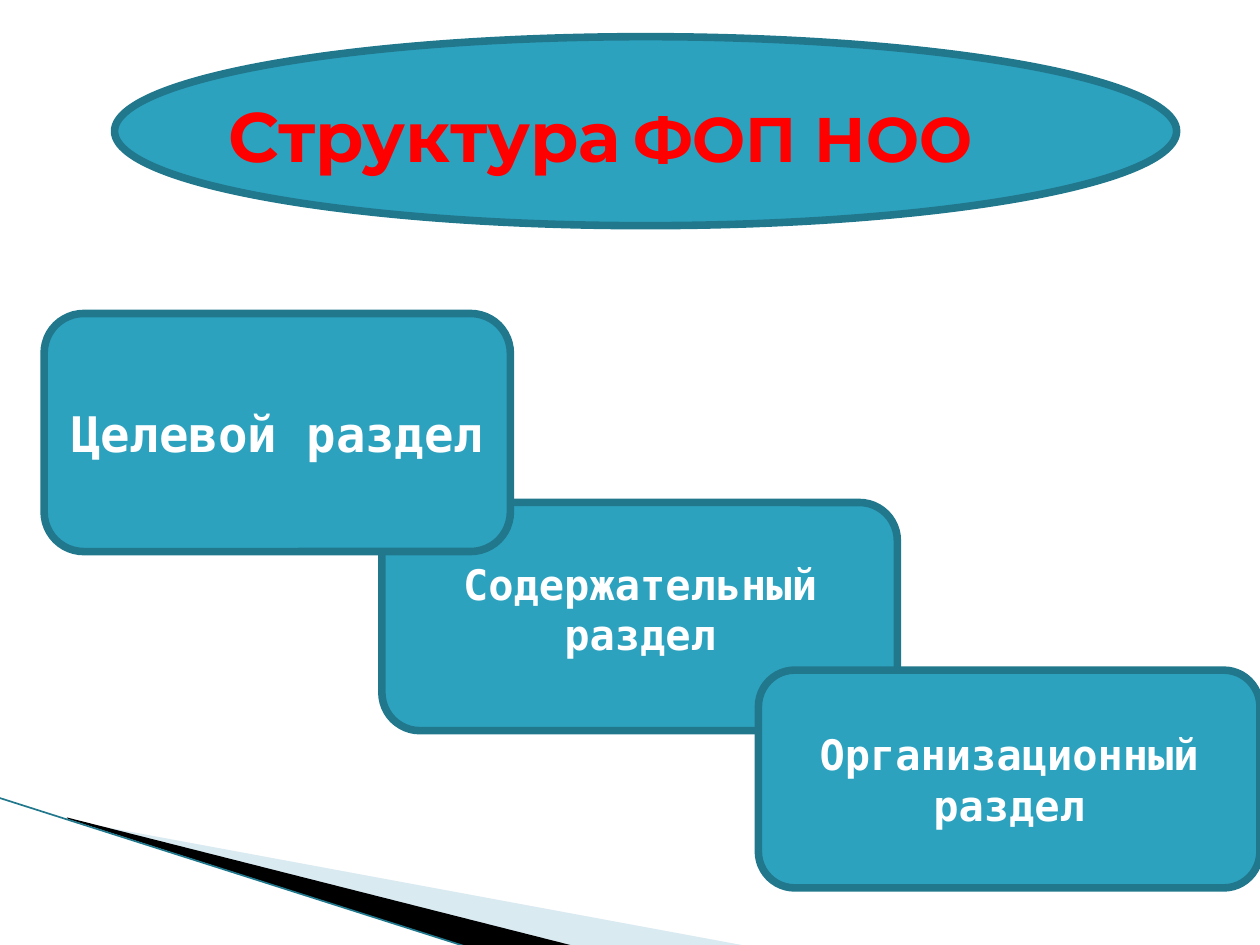
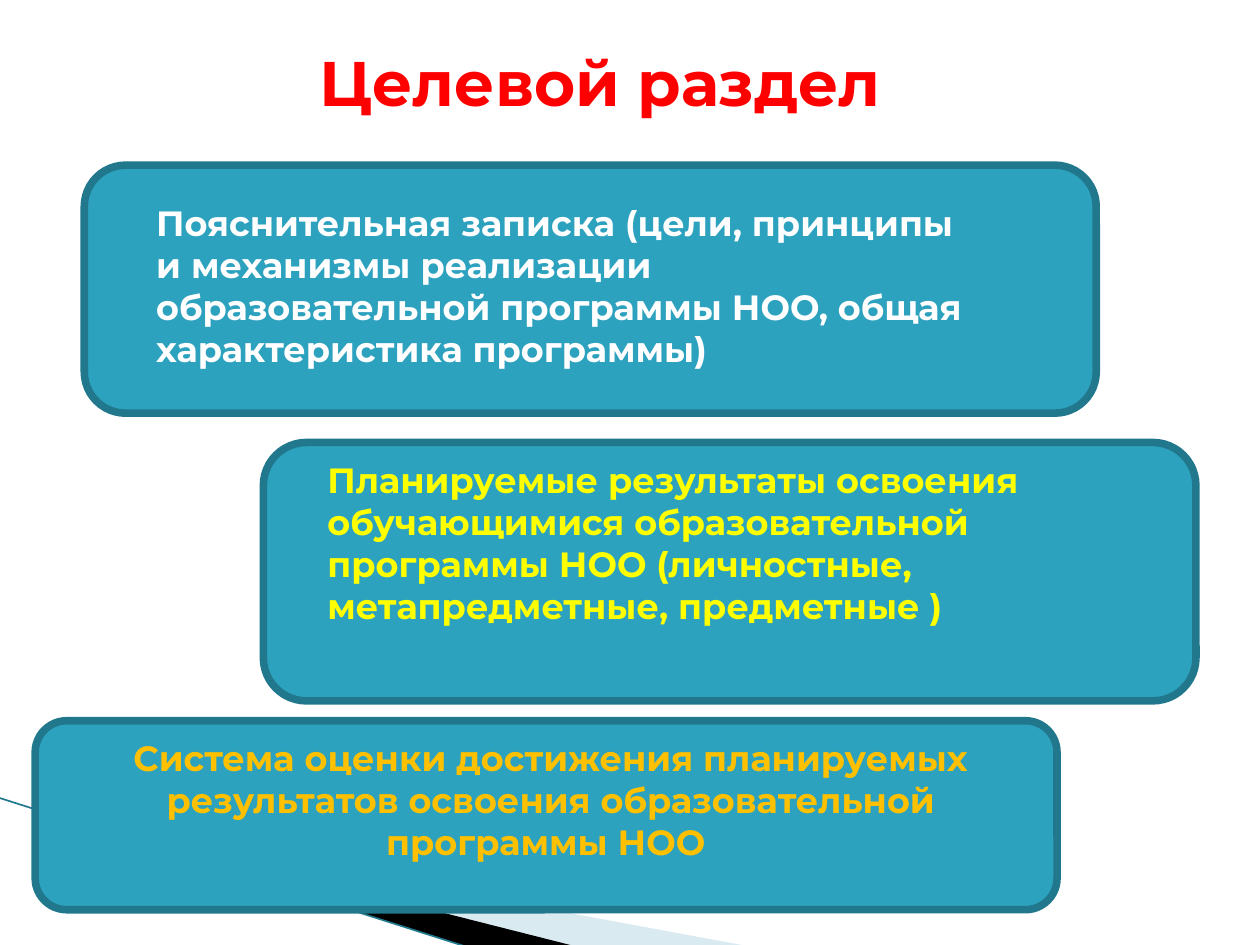
from lxml import etree
from pptx import Presentation
from pptx.dml.color import RGBColor
from pptx.enum import shapes, text
from pptx.oxml import ns
from pptx.util import Cm, Pt

TEAL = RGBColor(0x2D, 0xA2, 0xBF)
DARK_TEAL = RGBColor(0x21, 0x78, 0x8D)
PALE_BLUE = RGBColor(0xA0, 0xCB, 0xDC)
BLACK = RGBColor(0, 0, 0)
WHITE = RGBColor(0xFF, 0xFF, 0xFF)
RED = RGBColor(0xFF, 0, 0)
YELLOW = RGBColor(0xFF, 0xFF, 0)
ORANGE = RGBColor(0xFF, 0xC0, 0)
HEAD_FONT, MONO_FONT = "Montserrat", "DejaVu Sans Mono"
CENTER, LEFT = text.PP_ALIGN.CENTER, text.PP_ALIGN.LEFT
TOP, MIDDLE = text.MSO_ANCHOR.TOP, text.MSO_ANCHOR.MIDDLE
ROUNDED, OVAL = shapes.MSO_SHAPE.ROUNDED_RECTANGLE, shapes.MSO_SHAPE.OVAL


# Shared helpers
def write(sp, runs, font, color, align=CENTER, anchor=TOP):
    """Fill a shape with one bold paragraph made of (words, size) runs."""
    tf = sp.text_frame
    frame_format = {"word_wrap": True, "auto_size": text.MSO_AUTO_SIZE.NONE,
                    "vertical_anchor": anchor}
    for name, value in frame_format.items():
        setattr(tf, name, value)
    p = tf.paragraphs[0]
    p.alignment = align
    for words, size in runs:
        r = p.add_run()
        r.text = words
        for name, value in {"name": font, "size": Pt(size), "bold": True}.items():
            setattr(r.font, name, value)
        r.font.color.rgb = color


def add_panel(s, box, kind=ROUNDED):
    sp = s.shapes.add_shape(kind, *map(Cm, box))
    sp.shadow.inherit = False
    sp.fill.solid()
    sp.fill.fore_color.rgb = TEAL
    sp.line.color.rgb = DARK_TEAL
    sp.line.width = Pt(4.33)
    return sp


def add_caption(s, panel_box, inset, size, **style):
    """Place a text box (left, top, width, height) inside a panel."""
    left, top, width, height = inset
    box = (panel_box[0] + left, panel_box[1] + top, width, height)
    sp = s.shapes.add_textbox(*map(Cm, box))
    write(sp, [(style.pop("words"), size)], **style)


def set_title(s, box, runs):
    title = s.shapes.title
    title.left, title.top, title.width, title.height = map(Cm, box)
    write(title, runs, HEAD_FONT, RED)
    title.element.getparent().append(title.element)  # bring to front


# Corner decoration, kept on the layout
def add_wedge(s, points, color, alpha=None):
    start, *rest = [(Cm(x), Cm(y)) for x, y in points]
    builder = s.shapes.build_freeform(*start)
    builder.add_line_segments(rest)
    sp = builder.convert_to_shape()
    sp.shadow.inherit = False
    sp.fill.solid()
    sp.fill.fore_color.rgb = color
    sp.line.fill.background()
    if alpha:
        clr = sp.element.spPr.find(".//" + ns.qn("a:srgbClr"))
        etree.SubElement(clr, ns.qn("a:alpha")).set("val", str(alpha * 1000))
    return sp


def decorate_layout(s):
    pale = add_wedge(s, [(1.4, 16.54), (15.11, 19.08), (11.58, 19.08), (1.4, 16.51)],
                     PALE_BLUE, alpha=40)
    dark = add_wedge(s, [(1.35, 16.48), (11.61, 19.08), (9.45, 19.1), (1.37, 16.51)],
                     BLACK)
    edge = s.shapes.add_connector(shapes.MSO_CONNECTOR.STRAIGHT,
                                  Cm(-0.03), Cm(16.08), Cm(9.45), Cm(19.1))
    edge.line.color.rgb = DARK_TEAL
    edge.line.width = Pt(0.95)
    etree.SubElement(edge.element.spPr, ns.qn("a:effectLst"))
    tree = s.slide_layout.shapes.element
    for number, sp in enumerate((pale, dark, edge), start=101):
        sp.element.find(".//" + ns.qn("p:cNvPr")).set("id", str(number))
        tree.append(sp.element)


# Slide 1: title in an ellipse over a staircase of sections
def build_structure(s):
    content_box = (7.7, 10.13, 10.39, 4.6)
    add_panel(s, content_box)
    add_caption(s, content_box, (0.61, 1, 9.19, 2.31), 24,
                words="Содержательный раздел", font=MONO_FONT, color=WHITE)
    add_panel(s, (2.31, 0.74, 21.41, 3.81), OVAL)
    set_title(s, (3.71, 1.73, 16.79, 1.96),
              [("Структура", 40), (" ", 24), ("ФОП НОО", 36)])
    for words, size, box in (
            ("Целевой раздел", 28, (0.89, 6.32, 9.4, 4.8)),
            ("Организационный раздел", 24, (15.29, 13.51, 10.11, 4.39))):
        write(add_panel(s, box), [(words, size)], MONO_FONT, WHITE, anchor=MIDDLE)


# Slide 2: three panels with the parts of the target section
def build_target_section(s):
    set_title(s, (3.3, 0.74, 17.6, 1.8), [("Целевой раздел", 36)])
    parts = (
        ("Пояснительная записка (цели, принципы и механизмы реализации "
         "образовательной программы НОО, общая характеристика программы)",
         WHITE, LEFT, (1.7, 3.33, 20.4, 5), (1.2, 0.61, 16.99, 3.68)),
        ("Планируемые результаты освоения обучающимися образовательной "
         "программы НОО (личностные, метапредметные, предметные )",
         YELLOW, LEFT, (5.31, 8.92, 18.8, 5.21), (1.04, 0.2, 16.56, 3.68)),
        ("Система оценки достижения планируемых результатов освоения "
         "образовательной программы НОО ",
         ORANGE, CENTER, (0.71, 14.53, 20.6, 3.81), (0.59, 0.2, 19.61, 2.82)),
    )
    for words, color, align, box, inset in parts:
        add_panel(s, box)
        add_caption(s, box, inset, 20, words=words, font=HEAD_FONT,
                    color=color, align=align)


def main():
    prs = Presentation()
    prs.slide_width, prs.slide_height = Cm(25.4), Cm(19.05)
    layout = prs.slide_layouts.get_by_name("Title Only")
    structure = prs.slides.add_slide(layout)
    decorate_layout(structure)
    build_structure(structure)
    build_target_section(prs.slides.add_slide(layout))
    prs.save("out.pptx")


if __name__ == "__main__":
    main()
